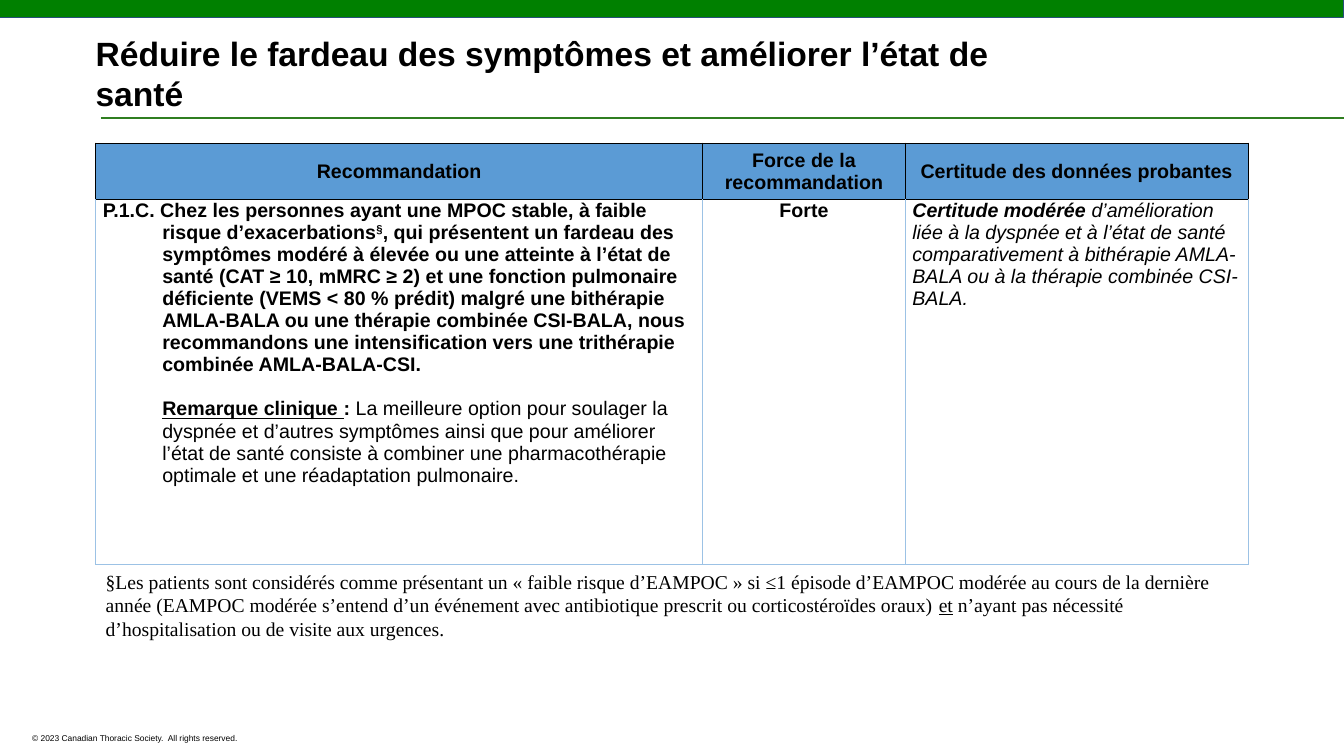
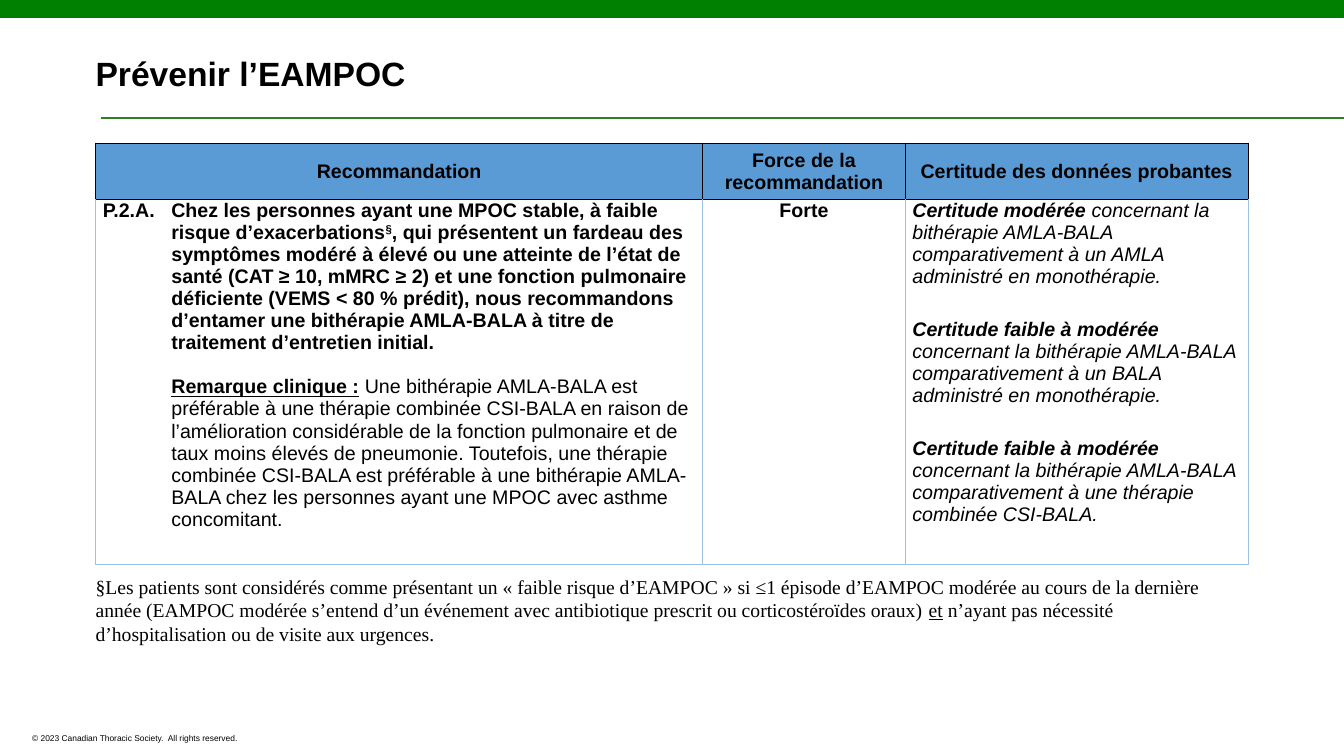
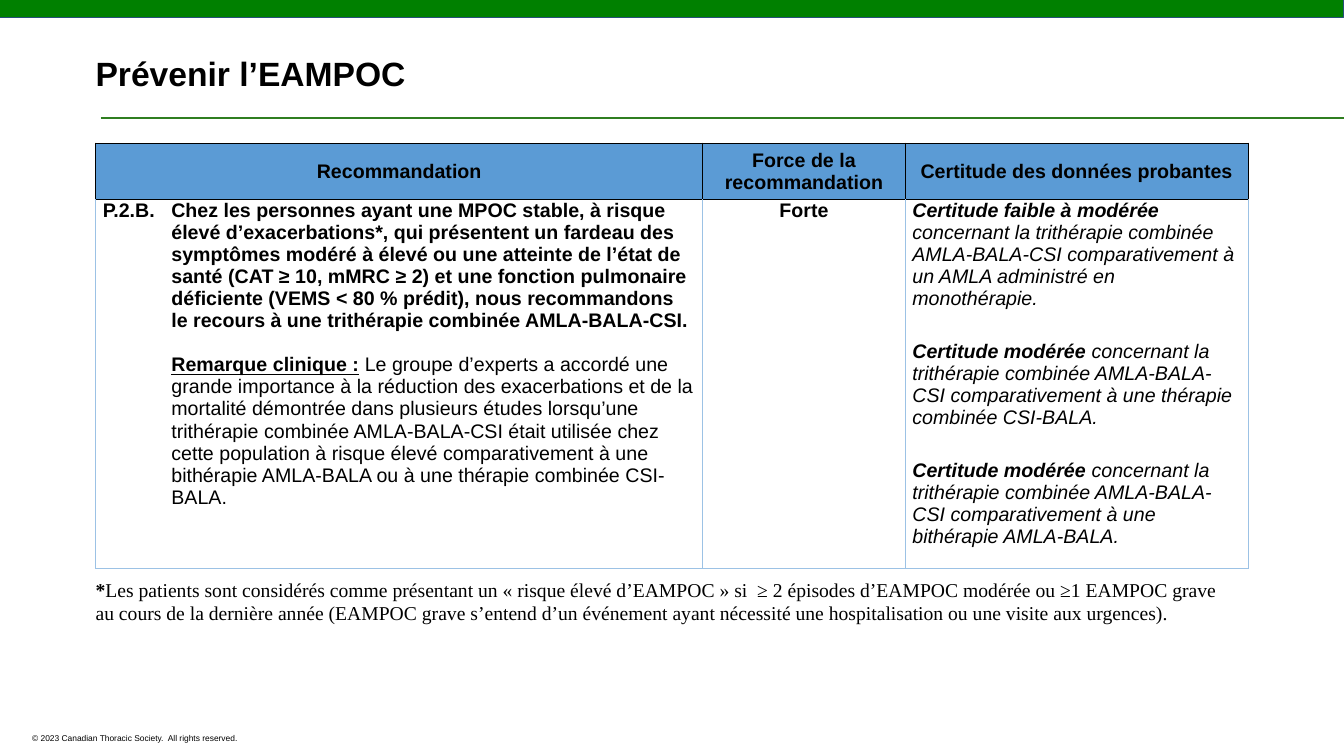
from dataclasses import dataclass

from lxml.etree import SubElement
from pptx import Presentation
from pptx.dml.color import RGBColor
from pptx.enum.shapes import MSO_CONNECTOR as Link, MSO_SHAPE as Form
from pptx.enum.text import MSO_ANCHOR as Anchor, PP_ALIGN as Align
from pptx.oxml.ns import qn
from pptx.util import Emu, Pt

# Shared look: 100 px to the inch
PX = 9144
WIDE, HIGH = 1333, 750
BLACK = RGBColor(0x00, 0x00, 0x00)
WHITE = RGBColor(0xFF, 0xFF, 0xFF)
GREEN = RGBColor(0x00, 0x80, 0x00)
NAVY = RGBColor(0x26, 0x51, 0x78)
RULE = RGBColor(0x2F, 0x7E, 0x20)
BLUE = RGBColor(0x5B, 0x9B, 0xD5)
PALE = RGBColor(0x9C, 0xC2, 0xE5)
SANS, SERIF = "Arial", "Times New Roman"

COLS = (602, 201, 340)
HEAD_H = 56
HEADS = ("Recommandation", "Force de la recommandation",
         "Certitude des données probantes")
FOOT = "© 2023 Canadian Thoracic Society.  All rights reserved."


@dataclass
class Run:
    text: str
    style: str = ""  # b bold, i italic, u underline, ^ superscript
    gap: int = 0     # letter spacing in hundredths of a point


@dataclass
class Para:
    runs: list[Run]
    before: int = 0
    left: int = 0
    hang: int = 0


@dataclass
class Page:
    title: str
    advice: list[Para]
    proof: list[Para]
    note: Para
    note_at: tuple[int, int, int, int]
    body_h: int = 362


def px(n: int) -> Emu:
    return Emu(n * PX)


def write(frame, paras: list[Para], size: int = 14, face: str = SANS,
          bold: bool = False, align: Align = Align.LEFT) -> None:
    frame.word_wrap = True
    for i, item in enumerate(paras):
        para = frame.paragraphs[0] if i == 0 else frame.add_paragraph()
        props = para._p.get_or_add_pPr()
        props.set("marL", str(px(item.left)))
        props.set("indent", str(px(-item.hang)))
        para.alignment = align
        if item.before:
            para.space_before = Pt(item.before)
        font = para.font
        font.name, font.size, font.bold = face, Pt(size), bold
        font.color.rgb = BLACK
        for part in item.runs:
            run = para.add_run()
            run.text = part.text
            if "b" in part.style:
                run.font.bold = True
            if "i" in part.style:
                run.font.italic = True
            if "u" in part.style:
                run.font.underline = True
            if "^" in part.style:
                run.font._element.set("baseline", "30000")
            if part.gap:
                run.font._element.set("spc", str(part.gap))


def plain(text: str) -> list[Para]:
    return [Para([Run(text)])]


def add_box(slide, at: tuple[int, int, int, int]):
    return slide.shapes.add_textbox(*map(px, at))


def add_frame(slide, title: str) -> None:
    # Top band
    band = slide.shapes.add_shape(Form.RECTANGLE, 0, 0, px(WIDE), px(17))
    band.shadow.inherit = False
    band.fill.solid()
    band.fill.fore_color.rgb = GREEN
    band.line.color.rgb = NAVY
    band.line.width = Pt(0.75)
    # Rule under the title
    rule = slide.shapes.add_connector(
        Link.STRAIGHT, px(100), px(117), px(WIDE), px(117))
    rule.line.color.rgb = RULE
    rule.line.width = Pt(1)
    SubElement(rule._element.spPr, qn("a:effectLst"))
    # Footer and title
    write(add_box(slide, (22, 722, 317, 20)).text_frame, plain(FOOT), 6)
    head = add_box(slide, (85, 36, 980, 73))
    head.fill.solid()
    head.fill.fore_color.rgb = WHITE
    head.text_frame.vertical_anchor = Anchor.MIDDLE
    write(head.text_frame, plain(title), 24, bold=True)


def edge(cell, side: str, color: RGBColor) -> None:
    line = SubElement(cell._tc.get_or_add_tcPr(), qn(f"a:ln{side}"),
                      w=str(Pt(1)))
    fill = SubElement(line, qn("a:solidFill"))
    SubElement(fill, qn("a:srgbClr"), val=str(color))


def style(cell, head: bool) -> None:
    cell.margin_left = cell.margin_right = px(7)
    cell.margin_top = cell.margin_bottom = 0
    cell.vertical_anchor = Anchor.MIDDLE if head else Anchor.TOP
    for side in "LRTB":
        edge(cell, side, BLACK if head or side == "T" else PALE)
    if head:
        cell.fill.solid()
        cell.fill.fore_color.rgb = BLUE
    else:
        cell.fill.background()


def add_grid(slide, page: Page) -> None:
    grid = slide.shapes.add_table(
        2, len(COLS), px(95), px(142), px(sum(COLS)),
        px(HEAD_H + page.body_h)).table
    grid.first_row = grid.horz_banding = False
    grid.rows[0].height, grid.rows[1].height = px(HEAD_H), px(page.body_h)
    body = (page.advice, plain("Forte"), page.proof)
    for i, wide in enumerate(COLS):
        grid.columns[i].width = px(wide)
        top, low = grid.cell(0, i), grid.cell(1, i)
        style(top, True)
        style(low, False)
        write(top.text_frame, plain(HEADS[i]), bold=True, align=Align.CENTER)
        mid = i == 1
        write(low.text_frame, body[i], bold=mid,
              align=Align.CENTER if mid else Align.LEFT)


def advice(lead: list[Run], mark: list[Run], text: str,
           left: int) -> list[Para]:
    return [Para(lead, left=left, hang=left),
            Para([*mark, Run(text)], before=16, left=left)]


def label(code: str) -> list[Run]:
    return [Run(code, "b"), Run(" ", "b", 780)]


def proof(*pairs: tuple[str, str]) -> list[Para]:
    return [Para([Run(f"{grade} ", "bi"), Run(text, "i")],
                 before=22 if i else 0)
            for i, (grade, text) in enumerate(pairs)]


# Content
MARK = [Run("Remarque clinique :", "bu"), Run(" ", "b")]
MID, LOW = "Certitude modérée", "Certitude faible à modérée"
LOW_NOTE = Para([
    Run("§Les patients sont considérés comme présentant un « faible risque "
        "d’EAMPOC » si ≤1 épisode d’EAMPOC modérée au cours de la dernière "
        "année (EAMPOC modérée s’entend d’un événement avec antibiotique "
        "prescrit ou corticostéroïdes oraux) "),
    Run("et", "u"),
    Run(" n’ayant pas nécessité d’hospitalisation ou de visite aux "
        "urgences.")])
HIGH_NOTE = Para([
    Run("*", "b"),
    Run("Les patients sont considérés comme présentant un « risque élevé "
        "d’EAMPOC » si  ≥ 2 épisodes d’EAMPOC modérée ou ≥1 EAMPOC grave au "
        "cours de la dernière année (EAMPOC grave s’entend d’un événement "
        "ayant nécessité une hospitalisation ou une visite aux urgences).")])

PAGES = [
    Page(
        "Réduire le fardeau des symptômes et améliorer l’état de santé",
        advice(
            [Run("P.1.C. Chez les personnes ayant une MPOC stable, à faible "
                 "risque d’exacerbations", "b"),
             Run("§", "b^"),
             Run(", qui présentent un fardeau des symptômes modéré à élevée "
                 "ou une atteinte à l’état de santé (CAT ≥ 10, mMRC ≥ 2) et "
                 "une fonction pulmonaire déficiente (VEMS < 80 % prédit) "
                 "malgré une bithérapie AMLA-BALA ou une thérapie combinée "
                 "CSI-BALA, nous recommandons une intensification vers une "
                 "trithérapie combinée AMLA-BALA-CSI.", "b")],
            [Run("Remarque clinique ", "bu"), Run(": ", "b")],
            "La meilleure option pour soulager la dyspnée et d’autres "
            "symptômes ainsi que pour améliorer l’état de santé consiste à "
            "combiner une pharmacothérapie optimale et une réadaptation "
            "pulmonaire.", 59),
        proof((MID, "d’amélioration liée à la dyspnée et à l’état de santé "
                    "comparativement à bithérapie AMLA-BALA ou à la thérapie "
                    "combinée CSI-BALA.")),
        LOW_NOTE, (95, 560, 1163, 81)),
    Page(
        "Prévenir l’EAMPOC",
        advice(
            [*label("P.2.A."),
             Run("Chez les personnes ayant une MPOC stable, à faible risque "
                 "d’exacerbations", "b"),
             Run("§", "b^"),
             Run(", qui présentent un fardeau des symptômes modéré à élevé "
                 "ou une atteinte de l’état de santé (CAT ≥ 10, mMRC ≥ 2) et "
                 "une fonction pulmonaire déficiente (VEMS < 80 % prédit), "
                 "nous recommandons d’entamer une bithérapie AMLA-BALA à "
                 "titre de traitement d’entretien initial.", "b")],
            MARK,
            "Une bithérapie AMLA-BALA est préférable à une thérapie combinée "
            "CSI-BALA en raison de l’amélioration considérable de la fonction "
            "pulmonaire et de taux moins élevés de pneumonie. Toutefois, une "
            "thérapie combinée CSI-BALA est préférable à une bithérapie "
            "AMLA-BALA chez les personnes ayant une MPOC avec asthme "
            "concomitant.", 68),
        proof((MID, "concernant la bithérapie AMLA-BALA comparativement à un "
                    "AMLA administré en monothérapie."),
              (LOW, "concernant la bithérapie AMLA-BALA comparativement à un "
                    "BALA administré en monothérapie."),
              (LOW, "concernant la bithérapie AMLA-BALA comparativement à "
                    "une thérapie combinée CSI-BALA.")),
        LOW_NOTE, (85, 565, 1163, 81)),
    Page(
        "Prévenir l’EAMPOC",
        advice(
            [*label("P.2.B."),
             Run("Chez les personnes ayant une MPOC stable, à risque élevé "
                 "d’exacerbations*, qui présentent un fardeau des symptômes "
                 "modéré à élevé ou une atteinte de l’état de santé (CAT "
                 "≥ 10, mMRC ≥ 2) et une fonction pulmonaire déficiente "
                 "(VEMS < 80 % prédit), nous recommandons le recours à une "
                 "trithérapie combinée AMLA-BALA-CSI.", "b")],
            MARK,
            "Le groupe d’experts a accordé une grande importance à la "
            "réduction des exacerbations et de la mortalité démontrée dans "
            "plusieurs études lorsqu’une trithérapie combinée AMLA-BALA-CSI "
            "était utilisée chez cette population à risque élevé "
            "comparativement à une bithérapie AMLA-BALA ou à une thérapie "
            "combinée CSI-BALA.", 68),
        proof((LOW, "concernant la trithérapie combinée AMLA-BALA-CSI "
                    "comparativement à un AMLA administré en monothérapie."),
              (MID, "concernant la trithérapie combinée AMLA-BALA-CSI "
                    "comparativement à une thérapie combinée CSI-BALA."),
              (MID, "concernant la trithérapie combinée AMLA-BALA-CSI "
                    "comparativement à une bithérapie AMLA-BALA.")),
        HIGH_NOTE, (85, 568, 1154, 57), 366),
]


def main() -> None:
    deck = Presentation()
    deck.slide_width, deck.slide_height = px(WIDE), px(HIGH)
    for page in PAGES:
        slide = deck.slides.add_slide(deck.slide_layouts[6])
        add_frame(slide, page.title)
        add_grid(slide, page)
        write(add_box(slide, page.note_at).text_frame, [page.note],
              face=SERIF)
    deck.save("out.pptx")


if __name__ == "__main__":
    main()
